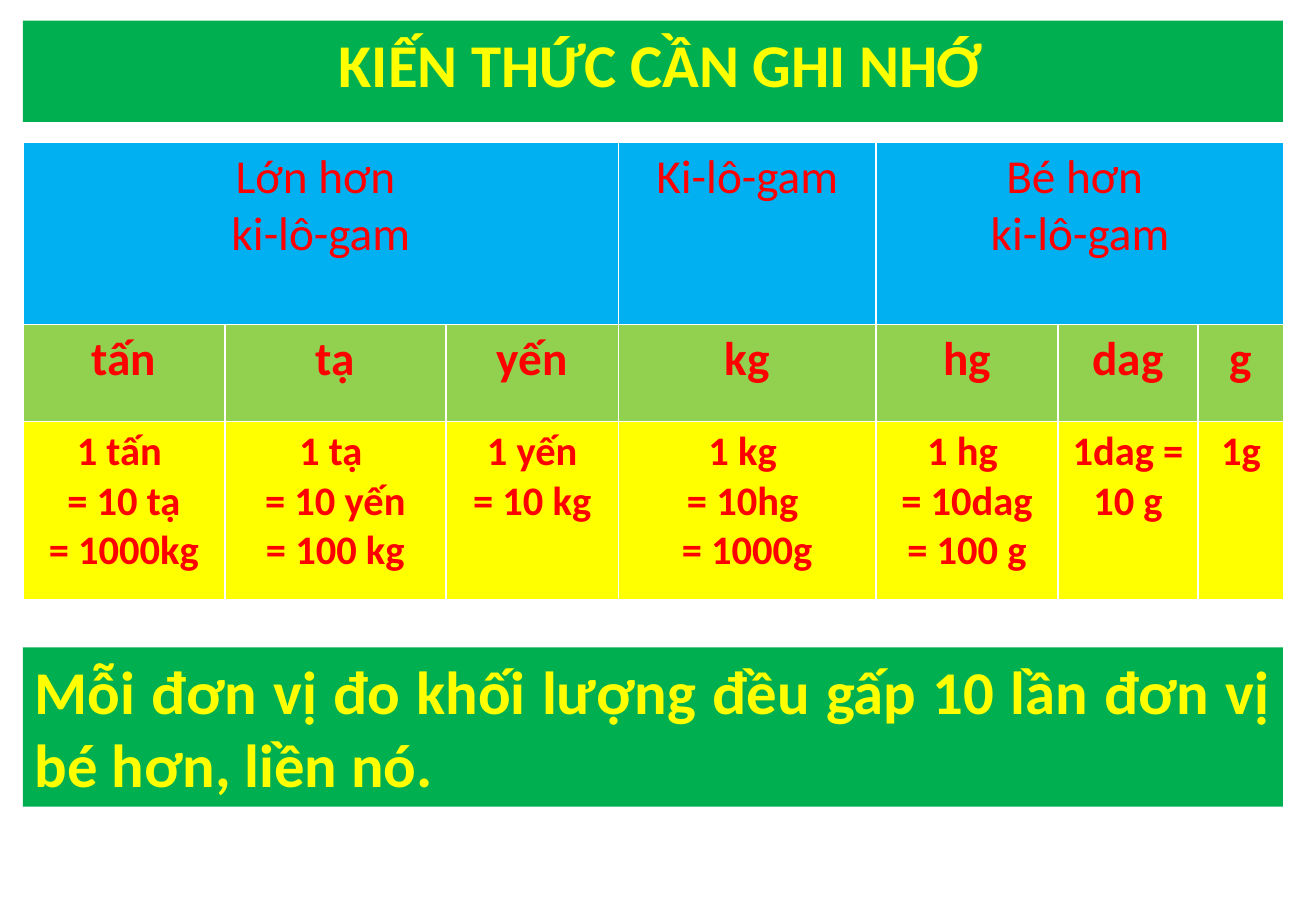
from lxml import etree
from pptx import Presentation
from pptx.dml.color import RGBColor
from pptx.enum import shapes, text
from pptx.oxml import ns
from pptx.util import Cm, Pt

GREEN = RGBColor(0x00, 0xB0, 0x50)
BLUE = RGBColor(0x00, 0xB0, 0xF0)
LIME = RGBColor(0x92, 0xD0, 0x50)
YELLOW = RGBColor(0xFF, 0xFF, 0x00)
RED = RGBColor(0xFF, 0x00, 0x00)
WHITE = RGBColor(0xFF, 0xFF, 0xFF)

LEFT, WIDTH = Cm(0.48), Cm(26.34)
COLUMNS = [4.22, 4.62, 3.61, 5.38, 3.81, 2.92, 1.8]
ROWS = [3.81, 2.03, 3.73]
GROUPS = [(0, 2, "Lớn hơn \nki-lô-gam"), (3, 3, "Ki-lô-gam"), (4, 6, "Bé hơn \nki-lô-gam")]
UNITS = ["tấn", "tạ", "yến", "kg", "hg", "dag", "g"]
RELATIONS = [
    "1 tấn \n= 10 tạ\n= 1000kg",
    "1 tạ \n= 10 yến\n= 100 kg",
    "1 yến\n= 10 kg",
    "1 kg \n= 10hg \n= 1000g",
    "1 hg \n= 10dag\n= 100 g",
    "1dag = 10 g",
    "1g",
]


def write(tf, content, size, color, bold=True, align=text.PP_ALIGN.CENTER):
    for i, line in enumerate(content.split("\n")):
        p = tf.paragraphs[0] if i == 0 else tf.add_paragraph()
        p.alignment = align
        r = p.add_run()
        r.text = line
        r.font.name = "Calibri"
        r.font.size = Pt(size)
        r.font.bold = bold
        r.font.color.rgb = color


def format_banner(sp, top, height, content, align):
    sp.left, sp.top, sp.width, sp.height = LEFT, top, WIDTH, height
    sp.fill.solid()
    sp.fill.fore_color.rgb = GREEN
    sp.line.fill.background()
    tf = sp.text_frame
    tf.word_wrap = True
    tf.auto_size = text.MSO_AUTO_SIZE.SHAPE_TO_FIT_TEXT
    tf.vertical_anchor = text.MSO_ANCHOR.TOP
    write(tf, content, 36, YELLOW, align=align)


def add_borders(cell):
    tcPr = cell._tc.get_or_add_tcPr()
    for i, side in enumerate(("lnL", "lnR", "lnT", "lnB")):
        ln = etree.Element(ns.qn("a:" + side), w=str(Pt(1)))
        fill = etree.SubElement(ln, ns.qn("a:solidFill"))
        etree.SubElement(fill, ns.qn("a:srgbClr"), val=str(WHITE))
        tcPr.insert(i, ln)


def add_unit_table(s):
    frame = s.shapes.add_table(len(ROWS), len(COLUMNS), LEFT, Cm(2.97), WIDTH, Cm(sum(ROWS)))
    table = frame.table
    for column, width in zip(table.columns, COLUMNS):
        column.width = Cm(width)
    for row, height, color in zip(table.rows, ROWS, (BLUE, LIME, YELLOW)):
        row.height = Cm(height)
        for cell in row.cells:
            add_borders(cell)
            cell.fill.solid()
            cell.fill.fore_color.rgb = color
    for first, last, label in GROUPS:
        cell = table.cell(0, first)
        if last > first:
            cell.merge(table.cell(0, last))
        write(cell.text_frame, label, 28, RED, bold=False)
    for i, (unit, relation) in enumerate(zip(UNITS, RELATIONS)):
        write(table.cell(1, i).text_frame, unit, 28, RED)
        write(table.cell(2, i).text_frame, relation, 24, RED)


def main():
    prs = Presentation()
    prs.slide_width, prs.slide_height = Cm(27.51), Cm(19.05)
    s = prs.slides.add_slide(prs.slide_layouts[5])
    format_banner(s.shapes.title, Cm(0.43), Cm(1.8), " KIẾN THỨC CẦN GHI NHỚ", text.PP_ALIGN.CENTER)
    add_unit_table(s)
    top, height = Cm(13.54), Cm(3.33)
    rule = s.shapes.add_shape(shapes.MSO_SHAPE.RECTANGLE, LEFT, top, WIDTH, height)
    rule.shadow.inherit = False
    format_banner(rule, top, height, "Mỗi đơn vị đo khối lượng đều gấp 10 lần đơn vị bé hơn, liền nó. ",
                  text.PP_ALIGN.JUSTIFY)
    prs.save("out.pptx")


if __name__ == "__main__":
    main()
